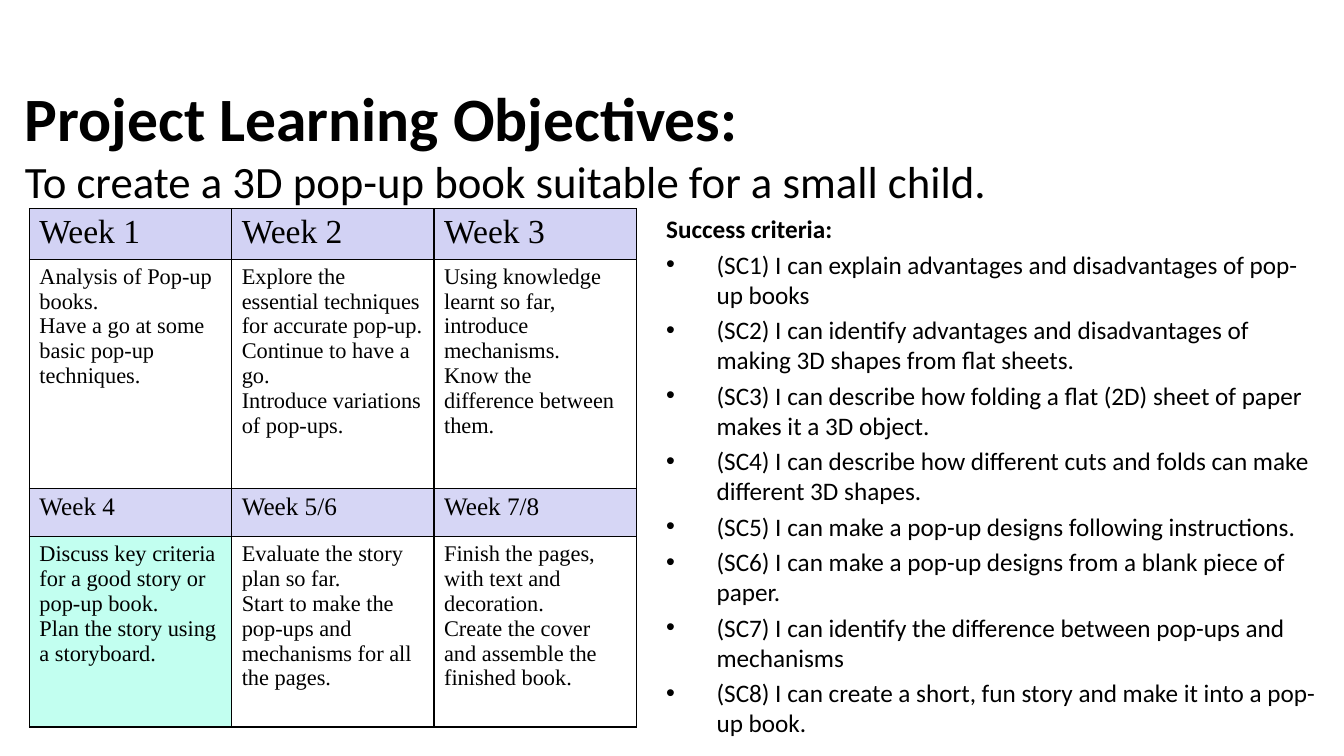
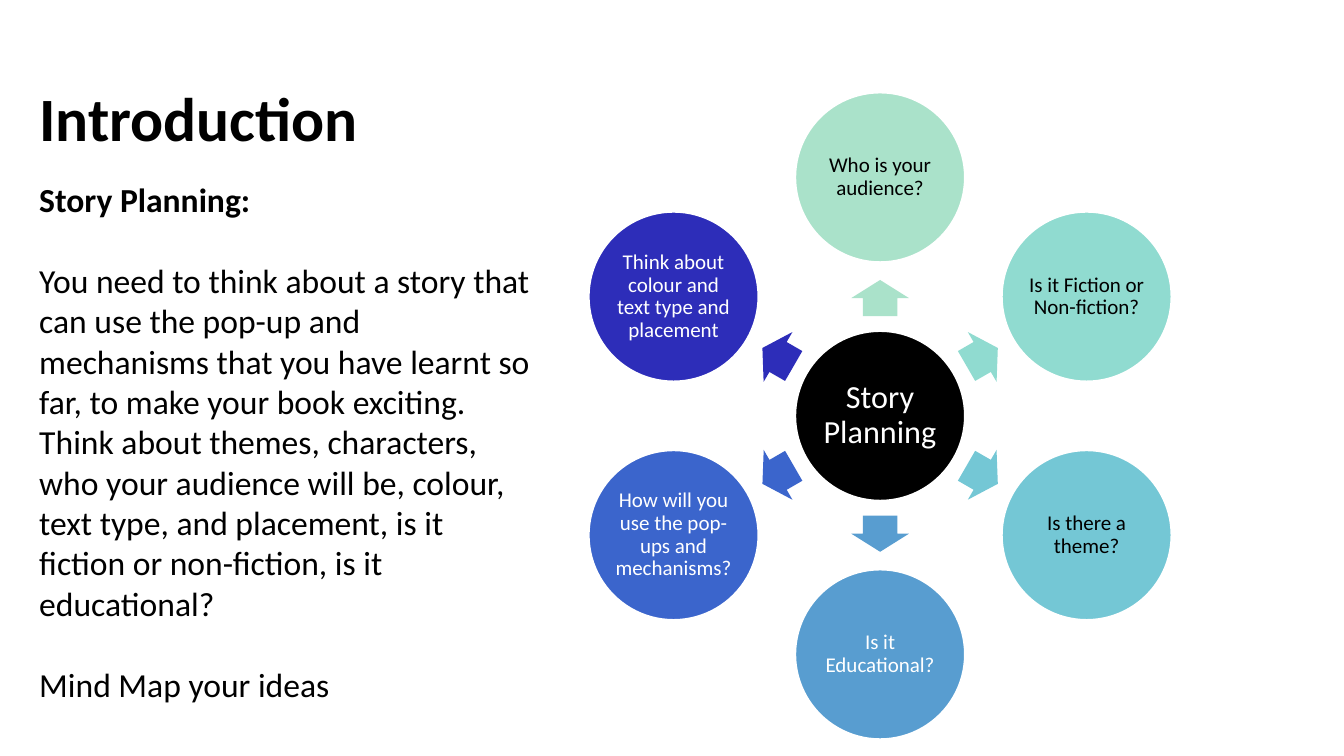
from math import cos, radians, sin

from lxml.etree import SubElement
from pptx import Presentation
from pptx.dml.color import RGBColor
from pptx.enum.shapes import MSO_SHAPE as Preset
from pptx.enum.text import MSO_ANCHOR as Anchor, PP_ALIGN as Align
from pptx.oxml.ns import qn
from pptx.util import Cm, Pt

BLACK, WHITE = "000000", "FFFFFF"
HEADER_TOP, HEADER_BOTTOM, CURRENT_WEEK = "D2D2F4", "D6D6F5", "C2FFF0"
BODY_FONT, TABLE_FONT = "Calibri", "Times New Roman"
TITLE_SIZE = 44

CRITERIA = [
    "I can explain advantages and disadvantages of pop-up books",
    "I can identify advantages and disadvantages of making 3D shapes from flat sheets.",
    "I can describe how folding a flat (2D) sheet of paper makes it a 3D object.",
    "I can describe how different cuts and folds can make different 3D shapes.",
    "I can make a pop-up designs following instructions.",
    "I can make a pop-up designs from a blank piece of paper.",
    "I can identify the difference between pop-ups and mechanisms",
    "I can create a short, fun story and make it into a pop-up book.",
]

WEEK_ROWS = [
    (1.22, 24, [HEADER_TOP] * 3, [["Week 1"], ["Week 2"], ["Week 3"]]),
    (5.77, 16, [WHITE] * 3, [
        ["Analysis of Pop-up books.", "Have a go at some basic pop-up techniques."],
        ["Explore the essential techniques for accurate pop-up.",
         "Continue to have a go.", "Introduce variations of pop-ups."],
        ["Using knowledge learnt so far, introduce mechanisms.",
         "Know the difference between them."],
    ]),
    (1.22, 18, [HEADER_BOTTOM] * 3, [["Week 4"], ["Week 5/6"], ["Week 7/8"]]),
    (4.8, 16, [CURRENT_WEEK, WHITE, WHITE], [
        ["Discuss key criteria for a good story or pop-up book.",
         "Plan the story using a storyboard."],
        ["Evaluate the story plan so far.",
         "Start to make the pop-ups and mechanisms for all the pages."],
        ["Finish the pages, with text and decoration.",
         "Create the cover and assemble the finished book."],
    ]),
]

QUESTIONS = [
    ("Who is your audience?", "AAE2CA", BLACK),
    ("Is it Fiction or Non-fiction?", "90DBD0", BLACK),
    ("Is there a theme?", "74C7D5", BLACK),
    ("Is it Educational?", "589DD0", WHITE),
    ("How will you use the pop-ups and mechanisms?", "3B65CC", WHITE),
    ("Think about colour and text type and placement", "2D2DB9", WHITE),
]


def color(value):
    return RGBColor.from_string(value)


def add_bullet(paragraph, indent):
    properties = paragraph._p.get_or_add_pPr()
    properties.set("marL", str(indent))
    properties.set("indent", str(-indent))
    SubElement(properties, qn("a:buFont"), typeface="Arial")
    SubElement(properties, qn("a:buChar"), char="•")


def write_text(frame, text, size=18, font=BODY_FONT, ink=BLACK, bold=False,
               align=Align.LEFT, before=0, line=None, bullet=False):
    first = not frame.text
    paragraph = frame.paragraphs[0] if first else frame.add_paragraph()
    paragraph.text = text
    paragraph.alignment = align
    if before and not first:
        paragraph.space_before = Pt(before)
    if line:
        paragraph.line_spacing = line
    if bullet:
        add_bullet(paragraph, Cm(1.27))
    paragraph.font.size = Pt(size)
    paragraph.font.name = font
    paragraph.font.bold = bold
    paragraph.font.color.rgb = color(ink)


def add_text_box(slide, left, top, width, height, anchor=Anchor.TOP):
    frame = slide.shapes.add_textbox(Cm(left), Cm(top), Cm(width), Cm(height)).text_frame
    frame.word_wrap = True
    frame.vertical_anchor = anchor
    return frame


def add_title(slide, text, left, top, width, height):
    frame = add_text_box(slide, left, top, width, height, Anchor.MIDDLE)
    write_text(frame, text, size=TITLE_SIZE, bold=True)
    return frame


def add_borders(cell):
    properties = cell._tc.get_or_add_tcPr()
    for position, side in enumerate(("a:lnL", "a:lnR", "a:lnT", "a:lnB")):
        border = SubElement(properties, qn(side), w=str(Pt(1)))
        SubElement(SubElement(border, qn("a:solidFill")), qn("a:srgbClr"), val=BLACK)
        properties.insert(position, border)


def add_week_table(slide, left, top, column_width):
    height = sum(row[0] for row in WEEK_ROWS)
    table = slide.shapes.add_table(len(WEEK_ROWS), 3, Cm(left), Cm(top),
                                   Cm(3 * column_width), Cm(height)).table
    table.first_row = table.horz_banding = False
    for column in table.columns:
        column.width = Cm(column_width)
    for row, (row_height, size, fills, texts) in zip(table.rows, WEEK_ROWS):
        row.height = Cm(row_height)
        for cell, fill, lines in zip(row.cells, fills, texts):
            cell.fill.solid()
            cell.fill.fore_color.rgb = color(fill)
            add_borders(cell)
            for text in lines:
                write_text(cell.text_frame, text, size=size, font=TABLE_FONT)


def add_centred_shape(slide, preset, x, y, width, height, fill):
    shape = slide.shapes.add_shape(preset, Cm(x - width / 2), Cm(y - height / 2),
                                   Cm(width), Cm(height))
    shape.shadow.inherit = False
    shape.fill.solid()
    shape.fill.fore_color.rgb = color(fill)
    shape.line.fill.background()
    return shape


def add_circle(slide, x, y, text, fill, ink, size):
    circle = add_centred_shape(slide, Preset.OVAL, x, y, 4.3, 4.3, fill)
    circle.line.color.rgb = color(WHITE)
    circle.line.width = Pt(2)
    frame = circle.text_frame
    frame.word_wrap = True
    frame.vertical_anchor = Anchor.MIDDLE
    frame.margin_left = frame.margin_right = Cm(0.05)
    frame.margin_top = frame.margin_bottom = Cm(0.05)
    write_text(frame, text, size=size, ink=ink, align=Align.CENTER, line=0.9)


def add_arrow(slide, x, y, angle, fill):
    arrow = add_centred_shape(slide, Preset.RIGHT_ARROW, x, y, 0.91, 1.45, fill)
    arrow.adjustments[0] = 0.6
    arrow.adjustments[1] = 0.5
    arrow.rotation = angle % 360


def add_mind_map(slide, x, y, arrow_radius, circle_radius):
    add_circle(slide, x, y, "Story Planning", BLACK, WHITE, 23)
    for index, (text, fill, ink) in enumerate(QUESTIONS):
        angle = index * 360 / len(QUESTIONS) - 90
        across, down = cos(radians(angle)), sin(radians(angle))
        add_arrow(slide, x + arrow_radius * across, y + arrow_radius * down, angle, fill)
        add_circle(slide, x + circle_radius * across, y + circle_radius * down,
                   text, fill, ink, 15)


def build_objectives(slide):
    title = add_title(slide, "Project Learning Objectives:", 0.38, 1.73, 31.8, 3.78)
    write_text(title, "To create a 3D pop-up book suitable for a small child.", size=32)
    criteria = add_text_box(slide, 16.54, 5.26, 16.99, 13.06)
    write_text(criteria, "Success criteria:", bold=True)
    for number, text in enumerate(CRITERIA, 1):
        write_text(criteria, f"(SC{number}) {text}", before=3.6, bullet=True)
    add_week_table(slide, 0.74, 5.26, 5.1)


def build_introduction(slide):
    add_title(slide, "Introduction", 0.74, 1.95, 28.78, 2)
    story = add_text_box(slide, 0.74, 4.39, 12.98, 13.59)
    write_text(story, "Story Planning:", size=24, bold=True)
    write_text(story, "You need to think about a story that can use the pop-up and "
               "mechanisms that you have learnt so far, to make your book exciting.",
               size=24, before=29)
    write_text(story, "Think about themes, characters, who your audience will be, colour, "
               "text type, and placement, is it fiction or non-fiction, is it educational?",
               size=24)
    write_text(story, "Mind Map your ideas", size=24, before=29)
    add_mind_map(slide, 22.18, 10.48, 2.97, 6.01)


def main():
    presentation = Presentation()
    presentation.slide_width = Cm(33.87)
    presentation.slide_height = Cm(19.05)
    for build in (build_objectives, build_introduction):
        build(presentation.slides.add_slide(presentation.slide_layouts[6]))
    presentation.save("out.pptx")


if __name__ == "__main__":
    main()
